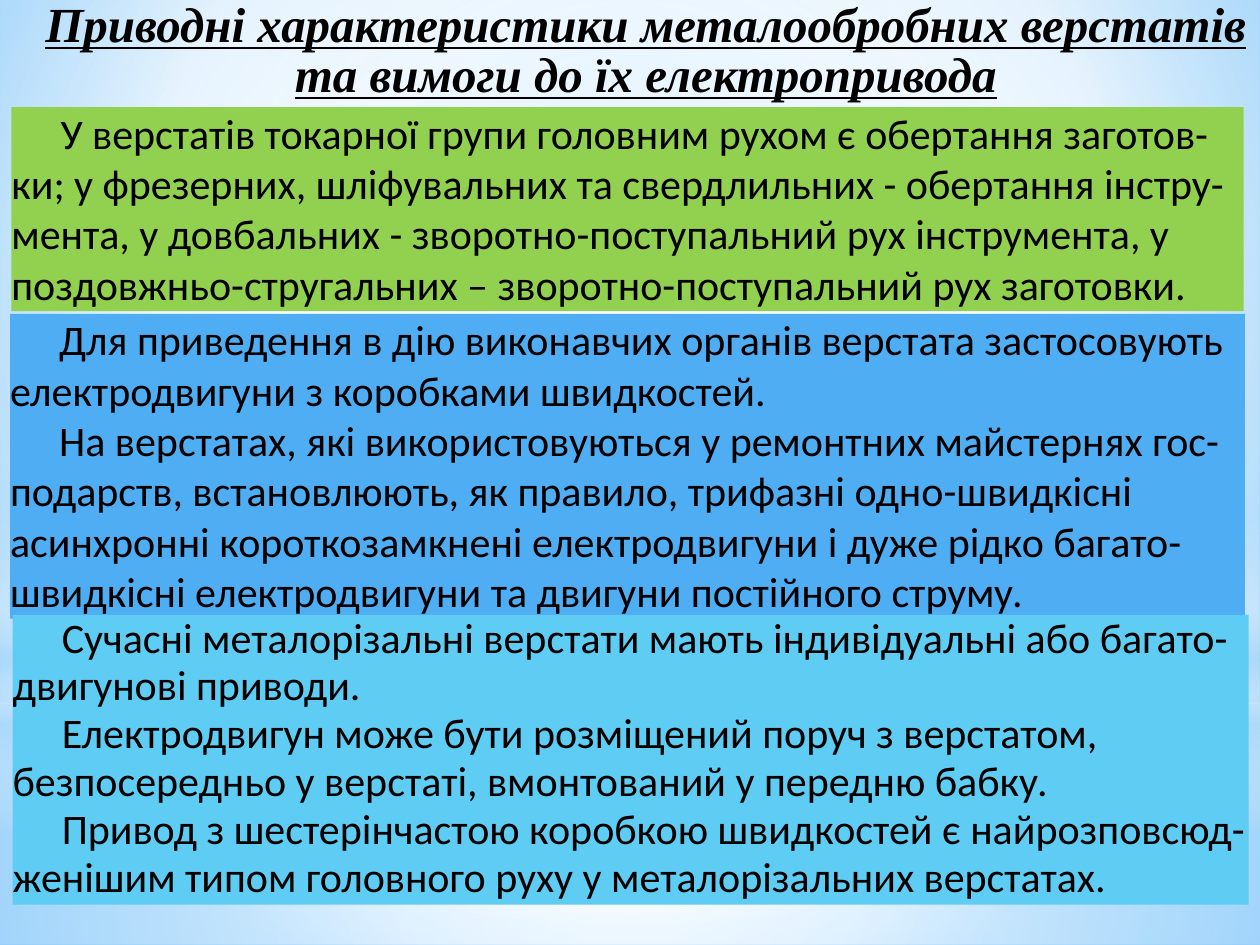
"""Builds a slide on the drive characteristics of metalworking machine tools."""
from lxml.etree import SubElement
from pptx import Presentation
from pptx.dml.color import RGBColor
from pptx.enum.shapes import MSO_SHAPE
from pptx.enum.text import MSO_ANCHOR, MSO_AUTO_SIZE, PP_ALIGN
from pptx.oxml.ns import qn
from pptx.util import Inches, Pt

WIDTH, HEIGHT = 10, 7.5
COLOURS = {
    "black": "000000", "white": "FFFFFF", "pale": "B4DCFA", "sky": "9ED5FF",
    "deep": "5BB9FF", "green": "92D050", "blue": "4FADF3", "cyan": "5ECCF3",
}
CENTRE = (50, 50, 50, 50)
BACKGROUND = [(0, "sky", 100), (60, "white", 100), (100, "deep", 100)]
GLOWS = [
    (MSO_SHAPE.RECTANGLE, 5.58, 1.92, CENTRE,
     [(0, "white", 91), (37, "white", 76), (100, "pale", 79)]),
    (MSO_SHAPE.RECTANGLE, 0, 5.58, CENTRE,
     [(0, "white", 89), (48, "white", 62), (100, "pale", 79)]),
    (MSO_SHAPE.RECTANGLE, 4.12, 2.5, None,
     [(0, "white", 0), (29, "white", 30), (45, "pale", 40),
      (55, "white", 26), (65, "pale", 60), (100, "white", 0)]),
    (MSO_SHAPE.OVAL, 1.75, 5.58, CENTRE, [(0, "white", 100), (56, "white", 0)]),
]
TITLE = [
    ("Приводні характеристики металообробних верстатів та вимоги до їх", True),
    (" ", False),
    ("електропривода", True),
]
PANELS = [
    ("green", (0.09, 0.85, 9.78, 1.62), 1.0, [
        "У верстатів токарної групи головним рухом є обертання заготов-ки; "
        "у фрезерних, шліфувальних та свердлильних - обертання інстру-мента, "
        "у довбальних - зворотно-поступальний рух інструмента, "
        "у поздовжньо-стругальних – зворотно-поступальний рух заготовки.",
    ]),
    ("blue", (0.08, 2.49, 9.8, 2.42), 1.0, [
        "Для приведення в дію виконавчих органів верстата застосовують "
        "електродвигуни з коробками швидкостей.",
        "На верстатах, які використовуються у ремонтних майстернях "
        "гос-подарств, встановлюють, як правило, трифазні одно-швидкісні "
        "асинхронні короткозамкнені електродвигуни і дуже рідко "
        "багато-швидкісні електродвигуни та двигуни постійного струму.",
    ]),
    ("cyan", (0.1, 4.88, 9.81, 2.3), 0.95, [
        "Сучасні металорізальні верстати мають індивідуальні або "
        "багато-двигунові приводи.",
        "Електродвигун може бути розміщений поруч з верстатом, "
        "безпосередньо у верстаті, вмонтований у передню бабку.",
        "Привод з шестерінчастою коробкою швидкостей є "
        "найрозповсюд-женішим типом головного руху у металорізальних верстатах.",
    ]),
]


def colour(name):
    return RGBColor.from_string(COLOURS[name])


def set_gradient(fill, parent, stops, focus):
    fill.solid()
    solid = parent.find(qn("a:solidFill"))
    gradient = SubElement(parent, qn("a:gradFill"), rotWithShape="1")
    parent.replace(solid, gradient)
    stop_list = SubElement(gradient, qn("a:gsLst"))
    for position, name, opacity in stops:
        stop = SubElement(stop_list, qn("a:gs"), pos=str(position * 1000))
        tone = SubElement(stop, qn("a:srgbClr"), val=COLOURS[name])
        if opacity < 100:
            SubElement(tone, qn("a:alpha"), val=str(opacity * 1000))
    if focus:
        circle = SubElement(gradient, qn("a:path"), path="circle")
        edges = {side: str(share * 1000) for side, share in zip("ltrb", focus)}
        SubElement(circle, qn("a:fillToRect"), **edges)
    else:
        SubElement(gradient, qn("a:lin"), ang=str(90 * 60000), scaled="0")


def add_plain_shape(page, kind, area):
    shape = page.shapes.add_shape(kind, *map(Inches, area))
    shape.shadow.inherit = False
    shape.line.fill.background()
    return shape


def prepare_frame(box):
    frame = box.text_frame
    frame.margin_left = frame.margin_top = 0
    frame.margin_right = frame.margin_bottom = 0
    frame.word_wrap = True
    frame.auto_size = MSO_AUTO_SIZE.SHAPE_TO_FIT_TEXT
    frame.vertical_anchor = MSO_ANCHOR.TOP
    return frame


def style(para, font_name, size, spacing, align):
    para.font.name = font_name
    para.font.size = Pt(size)
    para.font.color.rgb = colour("black")
    para.line_spacing = spacing
    para.alignment = align


def add_panel(page, fill_name, area, spacing, texts):
    panel = add_plain_shape(page, MSO_SHAPE.RECTANGLE, area)
    panel.fill.solid()
    panel.fill.fore_color.rgb = colour(fill_name)
    frame = prepare_frame(panel)
    for index, text in enumerate(texts):
        para = frame.add_paragraph() if index else frame.paragraphs[0]
        para.text = text
        style(para, "Calibri", 24, spacing, PP_ALIGN.LEFT)
        properties = para._p.get_or_add_pPr()
        properties.set("marL", "0")
        properties.set("indent", str(Inches(0.39)))


def add_title(page):
    box = page.shapes.add_textbox(*map(Inches, (0.34, 0.02, 9.57, 0.8)))
    para = prepare_frame(box).paragraphs[0]
    style(para, "Times New Roman", 28, 0.85, PP_ALIGN.CENTER)
    para.font.bold = para.font.underline = True
    for text, italic in TITLE:
        span = para.add_run()
        span.text = text
        span.font.italic = italic


def main():
    deck = Presentation()
    deck.slide_width, deck.slide_height = Inches(WIDTH), Inches(HEIGHT)
    page = deck.slides.add_slide(deck.slide_layouts[6])
    backdrop = page.background.fill
    set_gradient(backdrop, page.element.find(".//" + qn("p:bgPr")),
                 BACKGROUND, (20, 10, 20, 60))
    for kind, top, height, focus, stops in GLOWS:
        glow = add_plain_shape(page, kind, (0, top, WIDTH, height))
        set_gradient(glow.fill, glow.element.spPr, stops, focus)
    for panel in PANELS:
        add_panel(page, *panel)
    add_title(page)
    deck.save("out.pptx")


if __name__ == "__main__":
    main()
